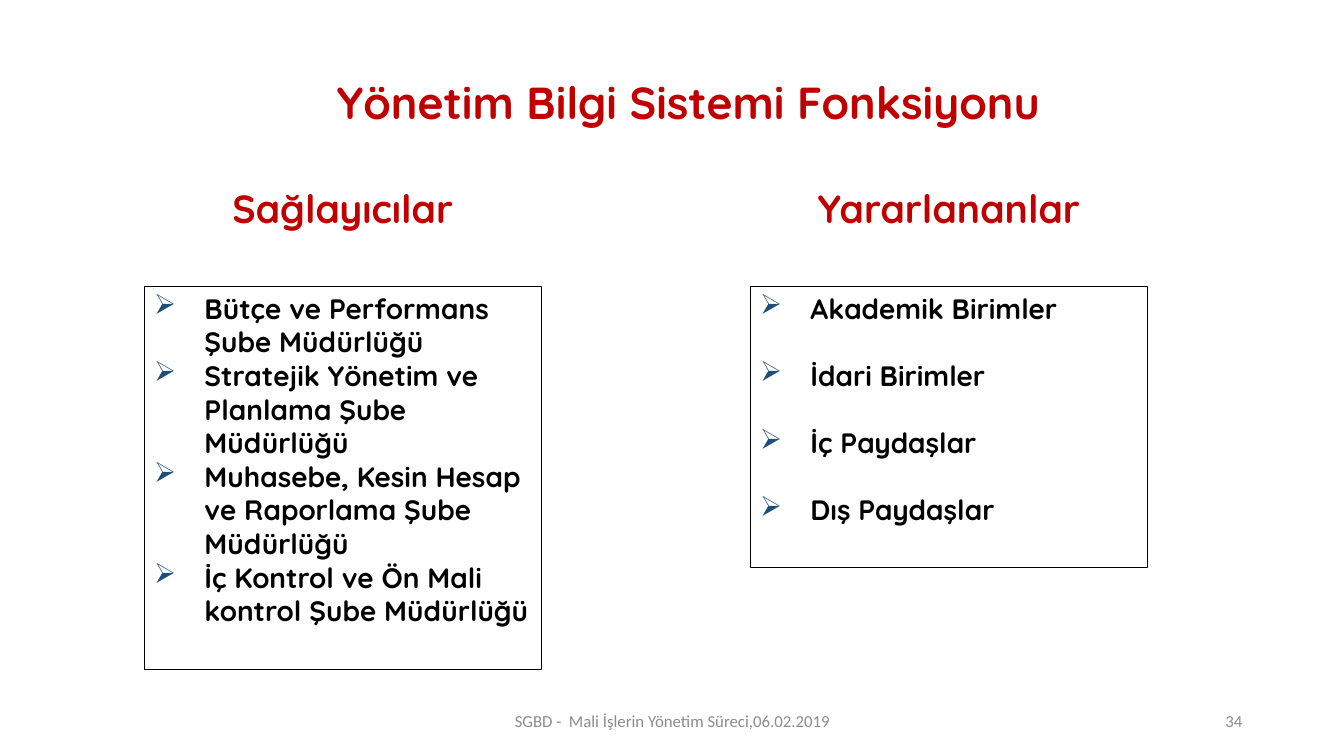
import pptx
import pptx.util
import pptx.dml.color
import pptx.enum.shapes
import pptx.enum.text
import pptx.oxml.ns
import lxml.etree

Inches = pptx.util.Inches
Pt = pptx.util.Pt
ALIGN = pptx.enum.text.PP_ALIGN
ANCHOR = pptx.enum.text.MSO_ANCHOR
COLORS = {"heading": "C00000", "body": "000000", "bullet": "1F4E79", "footer": "8C8C8C"}


class SlideBuilder:
    heading_font = "Quicksand"
    footer_font = "Calibri"

    def __init__(self, deck):
        self.slide = deck.slides.add_slide(deck.slide_layouts[5])

    def color(self, name):
        return pptx.dml.color.RGBColor.from_string(COLORS[name])

    def add_text(self, paragraph, text, size, color, font=heading_font, bold=True):
        run = paragraph.add_run()
        run.text = text
        run.font.size = Pt(size)
        run.font.name = font
        run.font.bold = bold
        run.font.color.rgb = self.color(color)

    def title(self, text, left, top, width, height):
        title = self.slide.shapes.title
        title.left, title.top = Inches(left), Inches(top)
        title.width, title.height = Inches(width), Inches(height)
        frame = title.text_frame
        frame.word_wrap = True
        frame.auto_size = pptx.enum.text.MSO_AUTO_SIZE.NONE
        frame.vertical_anchor = ANCHOR.MIDDLE
        frame.margin_bottom = Inches(0.55)  # lifts the line above the headings
        line = frame.paragraphs[0]
        line.alignment = ALIGN.CENTER
        line.line_spacing = 0.9
        self.add_text(line, text, 32, "heading")

    def label(self, left, top, width, height, align, anchor, text, *style):
        label = self.slide.shapes.add_textbox(
            Inches(left), Inches(top), Inches(width), Inches(height))
        frame = label.text_frame
        frame.word_wrap = True
        frame.vertical_anchor = anchor
        line = frame.paragraphs[0]
        line.alignment = align
        self.add_text(line, text, *style)

    def heading(self, text, left, top, width, height):
        self.label(left, top, width, height, ALIGN.CENTER, ANCHOR.TOP,
                   text, 28, "heading")

    def footer(self, text, left, width, align):
        self.label(left, 6.95, width, 0.4, align, ANCHOR.MIDDLE,
                   text, 12, "footer", self.footer_font, False)

    def bullet(self, paragraph):
        props = paragraph._p.get_or_add_pPr()
        props.set("marL", str(Inches(0.5)))
        props.set("indent", str(-Inches(0.5)))
        qn = pptx.oxml.ns.qn
        bullet_color = lxml.etree.SubElement(props, qn("a:buClr"))
        lxml.etree.SubElement(bullet_color, qn("a:srgbClr")).set("val", COLORS["bullet"])
        lxml.etree.SubElement(props, qn("a:buChar")).set("char", "➢")

    def list_box(self, items, left, top, width, height, gap):
        box = self.slide.shapes.add_shape(
            pptx.enum.shapes.MSO_SHAPE.RECTANGLE,
            Inches(left), Inches(top), Inches(width), Inches(height))
        box.shadow.inherit = False
        box.fill.background()
        box.line.color.rgb = self.color("body")
        box.line.width = Pt(0.75)
        frame = box.text_frame
        frame.word_wrap = True
        frame.vertical_anchor = ANCHOR.TOP
        for index, item in enumerate(items):
            entry = frame.add_paragraph() if index else frame.paragraphs[0]
            entry.alignment = ALIGN.LEFT
            entry.space_after = Pt(gap)
            self.bullet(entry)
            self.add_text(entry, item, 20, "body")


def main():
    deck = pptx.Presentation()
    deck.slide_width, deck.slide_height = Inches(13.33), Inches(7.5)
    builder = SlideBuilder(deck)

    # Title
    builder.title("Yönetim Bilgi Sistemi Fonksiyonu", 1.08, 0.57, 11.5, 1.45)

    # Columns: heading, left edge, box height, gap between items, items
    columns = [
        ("Sağlayıcılar", 1.43, 3.8, 0, [
            "Bütçe ve Performans Şube Müdürlüğü",
            "Stratejik Yönetim ve Planlama Şube Müdürlüğü",
            "Muhasebe, Kesin Hesap ve Raporlama Şube Müdürlüğü",
            "İç Kontrol ve Ön Mali kontrol Şube Müdürlüğü"]),
        ("Yararlananlar", 7.44, 2.79, 24, [
            "Akademik Birimler", "İdari Birimler", "İç Paydaşlar", "Dış Paydaşlar"]),
    ]
    for heading, left, height, gap, items in columns:
        builder.heading(heading, left, 1.78, 3.94, 0.57)
        builder.list_box(items, left, 2.84, 3.94, height, gap)

    # Footer and page number
    builder.footer("SGBD -  Mali İşlerin Yönetim Süreci,06.02.2019", 4.42, 4.5, ALIGN.CENTER)
    builder.footer("34", 9.42, 3, ALIGN.RIGHT)

    deck.save("out.pptx")


if __name__ == "__main__":
    main()
